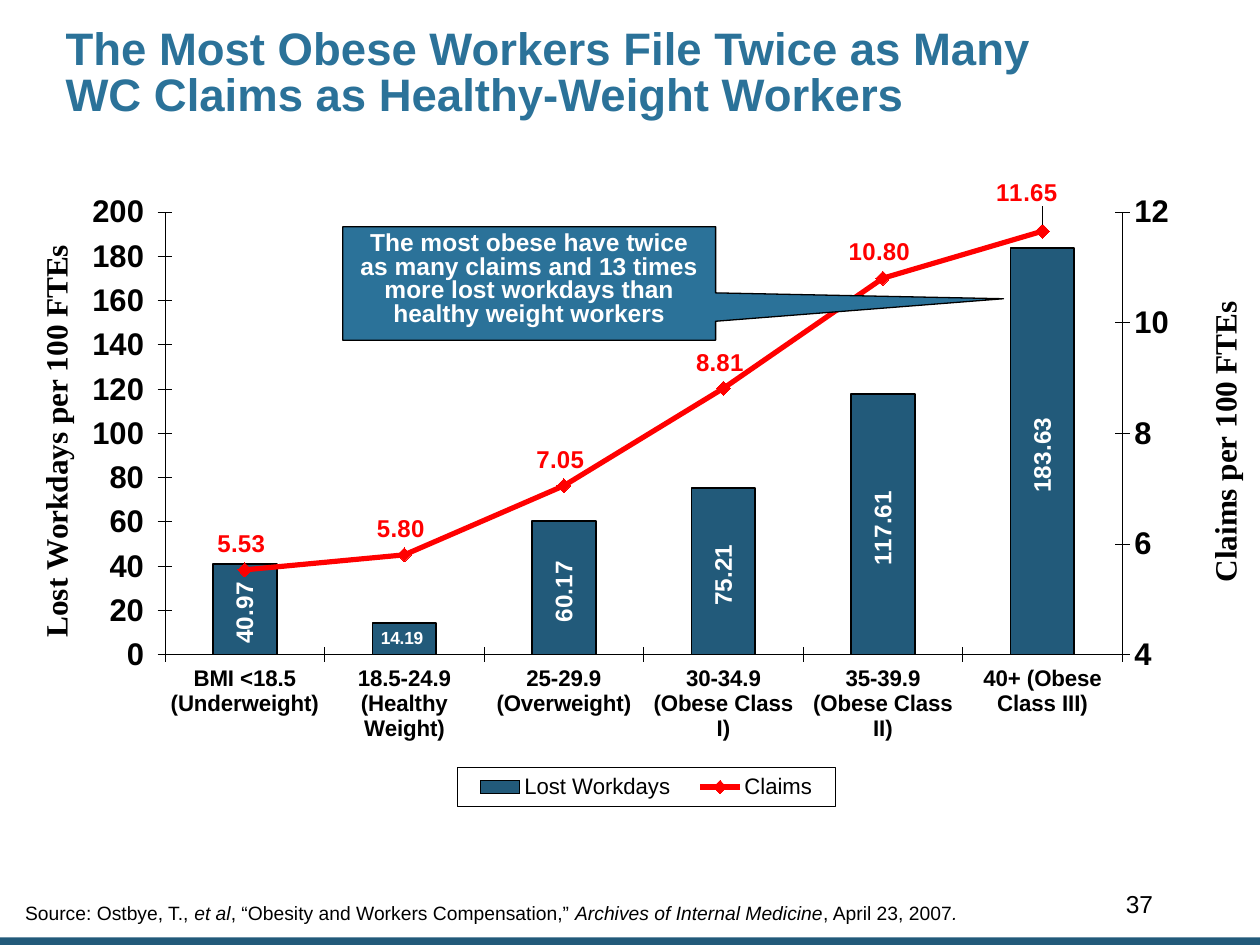
import copy

import lxml.etree
import pptx
import pptx.chart.axis
import pptx.chart.data
import pptx.dml.color
import pptx.enum.chart
import pptx.enum.shapes
import pptx.enum.text
import pptx.oxml
import pptx.oxml.ns
import pptx.util

Inches = pptx.util.Inches
Pt = pptx.util.Pt
qn = pptx.oxml.ns.qn
ALIGN = pptx.enum.text.PP_ALIGN
ANCHOR = pptx.enum.text.MSO_ANCHOR
LABEL = pptx.enum.chart.XL_LABEL_POSITION

NAVY, TEAL, RED, BLACK, WHITE = "225A7A", "2B7299", "FF0000", "000000", "FFFFFF"
AXIS_FORMAT = r"#,##0_);[Red]\(#,##0\)"
LABEL_FORMAT = r"#,##0.00_);[Red]\(#,##0.00\)"
UPWARD = "-5400000"
CATEGORIES = ["BMI <18.5 (Underweight)", "18.5-24.9 (Healthy Weight)",
              "25-29.9 (Overweight)", "30-34.9 (Obese Class I)",
              "35-39.9 (Obese Class II)", "40+ (Obese Class III)"]
LOST_WORKDAYS = [40.97, 14.19, 60.17, 75.21, 117.61, 183.63]
CLAIMS = [5.53, 5.80, 7.05, 8.81, 10.80, 11.65]
SOURCE = [("Source: Ostbye, T., ", False), ("et al", True),
          (", “Obesity and Workers Compensation,” ", False),
          ("Archives of Internal Medicine", True),
          (", April 23, 2007", False), (".", True)]


def rgb(color):
    return pptx.dml.color.RGBColor.from_string(color)


def set_font(font, size, color=BLACK, bold=False, name="Arial"):
    font.size, font.bold, font.name = Pt(size), bold, name
    font.color.rgb = rgb(color)


def set_line(line, color, width):
    line.color.rgb = rgb(color)
    line.width = Pt(width)


def add_filled_shape(slide, kind, box, color):
    shape = slide.shapes.add_shape(kind, *map(Inches, box))
    shape.shadow.inherit = False
    shape.fill.solid()
    shape.fill.fore_color.rgb = rgb(color)
    return shape


def add_title(slide):
    title = slide.shapes.title
    title.left, title.top, title.width, title.height = map(Inches, (0.42, 0.15, 8.61, 0.86))
    frame = title.text_frame
    frame.text = "The Most Obese Workers File Twice as Many\vWC Claims as Healthy-Weight Workers"
    frame.auto_size = pptx.enum.text.MSO_AUTO_SIZE.NONE
    frame.vertical_anchor = ANCHOR.BOTTOM
    heading = frame.paragraphs[0]
    heading.alignment, heading.line_spacing = ALIGN.LEFT, 0.85
    for run in heading.runs:
        set_font(run.font, 26, TEAL, True)


def add_text(slide, box, runs, size, anchor, alignment=ALIGN.LEFT, spacing=1.0):
    """Add one paragraph made of (text, italic) runs."""
    frame = slide.shapes.add_textbox(*map(Inches, box)).text_frame
    frame.word_wrap, frame.vertical_anchor = True, anchor
    paragraph = frame.paragraphs[0]
    paragraph.alignment, paragraph.line_spacing = alignment, spacing
    for text, italic in runs:
        run = paragraph.add_run()
        run.text = text
        set_font(run.font, size)
        run.font.italic = italic


def add_callout(slide):
    callout = add_filled_shape(
        slide, pptx.enum.shapes.MSO_SHAPE.RECTANGULAR_CALLOUT, (2.72, 1.8, 2.96, 0.9), TEAL)
    set_line(callout.line, BLACK, 0.75)
    callout.adjustments[0], callout.adjustments[1] = 1.272, 0.135
    frame = callout.text_frame
    frame.text = ("The most obese have twice as many claims and 13 times "
                  "more lost workdays than healthy weight workers")
    frame.word_wrap, frame.vertical_anchor = True, ANCHOR.TOP
    message = frame.paragraphs[0]
    message.alignment, message.line_spacing = ALIGN.CENTER, 0.8
    set_font(message.runs[0].font, 14, WHITE, True)


def set_layout(parent, position, **values):
    """Insert a manual layout as the child at the given position."""
    for old in parent.findall(qn("c:layout")):
        parent.remove(old)
    layout = lxml.etree.Element(qn("c:layout"))
    manual = lxml.etree.SubElement(layout, qn("c:manualLayout"))
    for name, value in values.items():
        lxml.etree.SubElement(manual, qn("c:" + name)).set("val", str(value))
    parent.insert(position, layout)


def style_axis(axis, size):
    axis.has_major_gridlines = False
    axis.major_tick_mark = pptx.enum.chart.XL_TICK_MARK.CROSS
    axis.minor_tick_mark = pptx.enum.chart.XL_TICK_MARK.NONE
    set_line(axis.format.line, BLACK, 0.25)
    set_font(axis.tick_labels.font, size, bold=True)


def scale_axis(axis, title, title_x, title_y, low, high, step):
    axis.minimum_scale, axis.maximum_scale, axis.major_unit = low, high, step
    axis.tick_labels.number_format = AXIS_FORMAT
    axis.tick_labels.number_format_is_linked = False
    frame = axis.axis_title.text_frame
    frame.text = title
    set_font(frame.paragraphs[0].runs[0].font, 17.9, bold=True, name="Times New Roman")
    heading = axis.axis_title._element
    body = heading.find(".//" + qn("a:bodyPr"))
    body.set("rot", UPWARD)
    body.set("vert", "horz")
    set_layout(heading, 1, xMode="edge", yMode="edge", x=title_x, y=title_y)


def add_labels(series, color, position):
    labels = series.data_labels
    labels.show_value, labels.position = True, position
    labels.number_format, labels.number_format_is_linked = LABEL_FORMAT, False
    set_font(labels.font, 13.9, color, True)
    return labels._element


def add_point_label(series, index, size, color, position):
    label = series.points[index].data_label
    set_font(label.font, size, color, True)
    label.position = position
    return series.data_labels._element.find(qn("c:dLbl"))


def hide_leader_lines(labels):
    labels.append(pptx.oxml.parse_xml(
        f'<c:extLst {pptx.oxml.ns.nsdecls("c")}>'
        '<c:ext uri="{CE6537A1-D6FC-4f65-9D91-7224C49458BB}" '
        'xmlns:c15="http://schemas.microsoft.com/office/drawing/2012/chart">'
        '<c15:showLeaderLines val="0"/></c:ext></c:extLst>'))


def move_to_second_axes(chart):
    """Turn the last column series into a line plot and return its value axis."""
    columns = chart.plots[0]._element
    line_series = columns.findall(qn("c:ser"))[-1]
    for inverted in line_series.findall(qn("c:invertIfNegative")):
        line_series.remove(inverted)
    line_plot = pptx.oxml.parse_xml(
        f'<c:lineChart {pptx.oxml.ns.nsdecls("c")}><c:grouping val="standard"/>'
        '<c:varyColors val="0"/><c:marker val="1"/>'
        '<c:axId val="5001"/><c:axId val="5002"/></c:lineChart>')
    line_plot.insert(2, line_series)
    columns.addnext(line_plot)

    first_value = chart.value_axis._element
    category, value = copy.deepcopy(chart.category_axis._element), copy.deepcopy(first_value)
    first_value.addnext(value)
    value.addnext(category)
    for axis, own, other in ((category, "5001", "5002"), (value, "5002", "5001")):
        axis.find(qn("c:axId")).set("val", own)
        axis.find(qn("c:crossAx")).set("val", other)
    value.find(qn("c:axPos")).set("val", "r")
    value.find(qn("c:crosses")).set("val", "max")
    pptx.chart.axis.CategoryAxis(category).visible = False
    return pptx.chart.axis.ValueAxis(value)


def add_legend(chart):
    chart.has_legend = True
    chart.legend.position = pptx.enum.chart.XL_LEGEND_POSITION.BOTTOM
    chart.legend.include_in_layout = False
    set_font(chart.legend.font, 12.8)
    legend = chart.legend._element
    set_layout(legend, 1, xMode="edge", yMode="edge", x=0.36, y=0.93, w=0.31, h=0.06)
    legend.find(qn("c:txPr")).addprevious(pptx.oxml.parse_xml(
        f'<c:spPr {pptx.oxml.ns.nsdecls("c", "a")}><a:ln w="3175"><a:solidFill>'
        f'<a:srgbClr val="{BLACK}"/></a:solidFill></a:ln></c:spPr>'))


def add_claims_chart(slide):
    data = pptx.chart.data.CategoryChartData()
    data.categories = CATEGORIES
    data.add_series("Lost Workdays", LOST_WORKDAYS)
    data.add_series("Claims", CLAIMS)
    chart = slide.shapes.add_chart(
        pptx.enum.chart.XL_CHART_TYPE.COLUMN_CLUSTERED,
        *map(Inches, (0.15, 1.35, 9.79, 5.1)), data).chart
    chart.has_title = False
    set_font(chart.font, 17.9, bold=True, name="Times New Roman")
    style_axis(chart.category_axis, 12.9)
    style_axis(chart.value_axis, 17.9)
    scale_axis(chart.value_axis, "Lost Workdays per 100 FTEs", 0.01, 0.1, 0, 200, 20)
    claims_axis = move_to_second_axes(chart)
    scale_axis(claims_axis, "Claims per 100 FTEs", 0.97, 0.19, 4, 12, 2)
    set_layout(chart._chartSpace.find(".//" + qn("c:plotArea")), 0, layoutTarget="inner",
               xMode="edge", yMode="edge", x=0.12, y=0.065, w=0.786, h=0.689)

    columns, lines = chart.plots
    columns.vary_by_categories, columns.gap_width = False, 150
    workdays, claims = columns.series[0], lines.series[0]
    workdays.format.fill.solid()
    workdays.format.fill.fore_color.rgb = rgb(NAVY)
    set_line(workdays.format.line, BLACK, 1)
    labels = add_labels(workdays, WHITE, LABEL.CENTER)
    labels.find(".//" + qn("a:bodyPr")).set("rot", UPWARD)
    short_bar = add_point_label(workdays, 1, 10, WHITE, LABEL.CENTER)
    short_bar.find(".//" + qn("a:bodyPr")).set("rot", "0")

    claims.smooth = False
    set_line(claims.format.line, RED, 3)
    claims.marker.style, claims.marker.size = pptx.enum.chart.XL_MARKER_STYLE.DIAMOND, 8
    claims.marker.format.fill.solid()
    claims.marker.format.fill.fore_color.rgb = rgb(RED)
    set_line(claims.marker.format.line, RED, 0.75)
    claim_labels = add_labels(claims, RED, LABEL.ABOVE)
    peak = add_point_label(claims, 5, 13.9, RED, LABEL.ABOVE)
    set_layout(peak, 1, x=-0.01, y=-0.02)
    hide_leader_lines(claim_labels)
    add_legend(chart)


def main():
    deck = pptx.Presentation()
    deck.slide_width, deck.slide_height = Inches(10), Inches(7.5)
    slide = deck.slides.add_slide(deck.slide_layouts[5])
    footer_bar = add_filled_shape(
        slide, pptx.enum.shapes.MSO_SHAPE.RECTANGLE, (0, 7.44, 10, 0.06), NAVY)
    footer_bar.line.fill.background()
    add_text(slide, (7.17, 6.92, 2.08, 0.5), [("37", False)], 14, ANCHOR.MIDDLE, ALIGN.RIGHT)
    add_title(slide)
    add_claims_chart(slide)
    add_text(slide, (0.1, 6.91, 9.82, 0.48), SOURCE, 11, ANCHOR.BOTTOM, spacing=0.9)
    add_callout(slide)
    deck.save("out.pptx")


if __name__ == "__main__":
    main()
